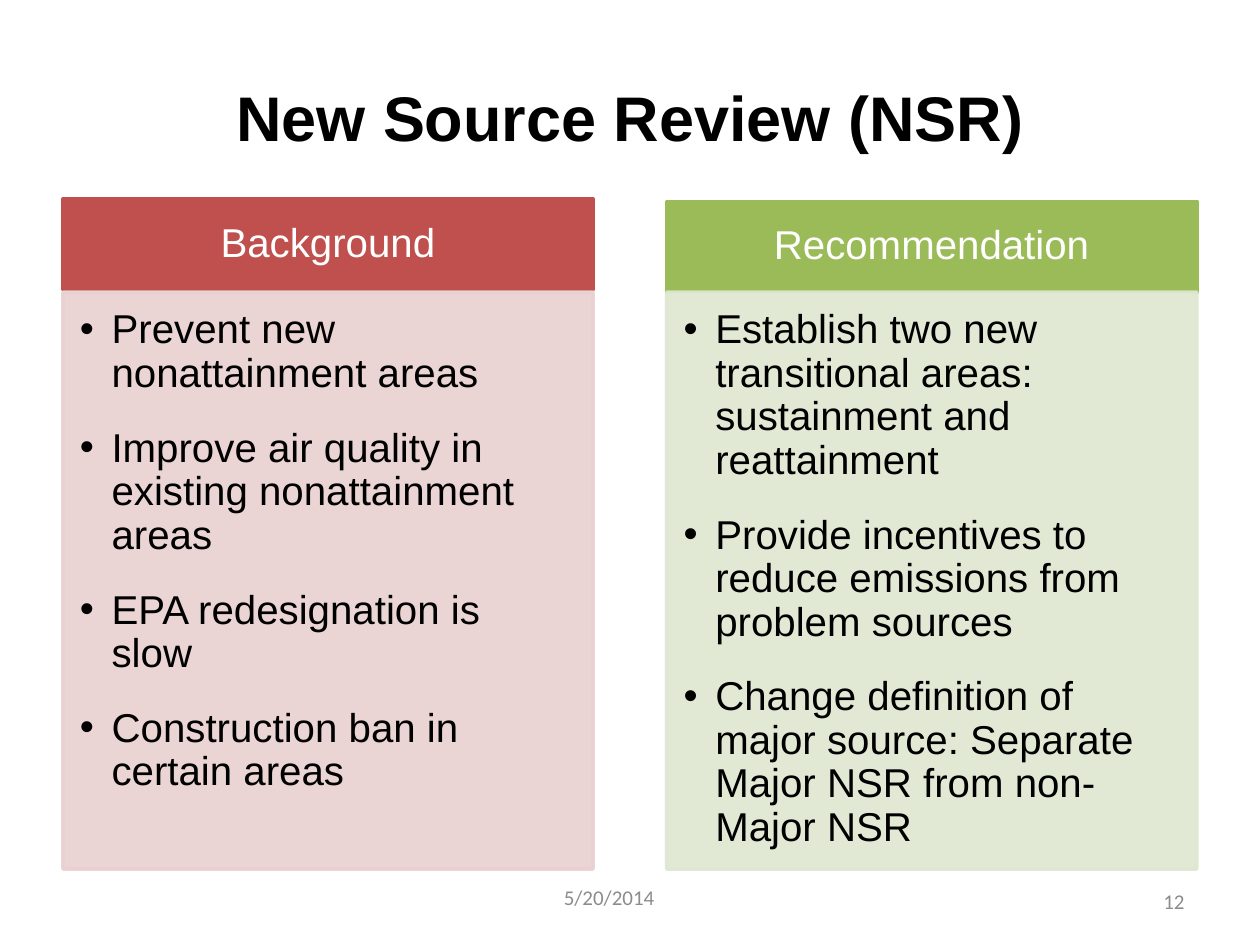
from lxml import etree
from pptx import Presentation
from pptx.dml.color import RGBColor
from pptx.enum.shapes import MSO_SHAPE
from pptx.enum.text import MSO_ANCHOR, PP_ALIGN
from pptx.oxml.ns import qn
from pptx.util import Cm, Pt

RECTANGLE = MSO_SHAPE.RECTANGLE
TOP, MIDDLE = MSO_ANCHOR.TOP, MSO_ANCHOR.MIDDLE
LEFT, CENTER, RIGHT = PP_ALIGN.LEFT, PP_ALIGN.CENTER, PP_ALIGN.RIGHT

COLORS = {
    "black": "000000",
    "white": "FFFFFF",
    "gray": "8C8C8C",
    "red": "C0504D",
    "pale_red": "E8D0D0",
    "green": "9BBB59",
    "pale_green": "DEE7D1",
}

COLUMN_WIDTH = 10.69
BODY_TOP = 5.89
BODY_HEIGHT = 11.63
HEADER_HEIGHT = 1.83
HEADER_INSETS = (0.45, 0.26, 0.45, 0.26)
BODY_INSETS = (0.34, 0.34, 0.45, 0.51)
DEFAULT_INSETS = (0.25, 0.13, 0.25, 0.13)

COLUMNS = [
    ("Background", 1.27, 4.01, "red", "pale_red", [
        "Prevent new nonattainment areas",
        "Improve air quality in existing nonattainment areas",
        "EPA redesignation is slow",
        "Construction ban in certain areas",
    ]),
    ("Recommendation", 13.44, 4.06, "green", "pale_green", [
        "Establish two new transitional areas: sustainment and reattainment",
        "Provide incentives to reduce emissions from problem sources",
        "Change definition of major source: Separate Major NSR from non-Major NSR",
    ]),
]


def add_bullet(paragraph, indent):
    properties = paragraph._p.get_or_add_pPr()
    properties.set("marL", str(indent))
    properties.set("indent", str(-indent))
    etree.SubElement(properties, qn("a:buFont")).set("typeface", "Arial")
    etree.SubElement(properties, qn("a:buChar")).set("char", "•")


def write_text(shape, lines, size, color, font="Arial", bold=False, align=CENTER,
               anchor=MIDDLE, insets=DEFAULT_INSETS, bullets=False,
               line_spacing=None, space_after=0):
    frame = shape.text_frame
    frame.word_wrap = True
    frame.vertical_anchor = anchor
    (frame.margin_left, frame.margin_top,
     frame.margin_right, frame.margin_bottom) = map(Cm, insets)
    frame.text = "\n".join(lines)
    for paragraph in frame.paragraphs:
        if bullets:
            add_bullet(paragraph, Cm(0.64))
        paragraph.alignment = align
        paragraph.line_spacing = line_spacing
        paragraph.space_after = Pt(space_after)
        paragraph.font.name = font
        paragraph.font.size = Pt(size)
        paragraph.font.bold = bold
        paragraph.font.color.rgb = RGBColor.from_string(COLORS[color])


def add_label(slide, text, left, top, width, height, **text_format):
    box = slide.shapes.add_textbox(Cm(left), Cm(top), Cm(width), Cm(height))
    write_text(box, [text], **text_format)


def add_panel(slide, left, top, height, color, opacity=100):
    shape = slide.shapes.add_shape(
        RECTANGLE, Cm(left), Cm(top), Cm(COLUMN_WIDTH), Cm(height))
    shape.shadow.inherit = False
    shape.line.width = Pt(2)
    shape.fill.solid()
    for fill in (shape.fill, shape.line.fill):
        fill.solid()
        fill.fore_color.rgb = RGBColor.from_string(COLORS[color])
    if opacity < 100:
        for element in shape._element.spPr.iter(qn("a:srgbClr")):
            etree.SubElement(element, qn("a:alpha")).set("val", str(opacity * 1000))
    return shape


def add_column(slide, heading, left, top, header_color, body_color, points):
    header = add_panel(slide, left, top, HEADER_HEIGHT, header_color)
    write_text(header, [heading], size=23, color="white",
               insets=HEADER_INSETS, line_spacing=0.9)
    body = add_panel(slide, left, BODY_TOP, BODY_HEIGHT, body_color, opacity=90)
    write_text(body, points, size=23, color="black", align=LEFT, anchor=TOP,
               insets=BODY_INSETS, bullets=True, line_spacing=0.9, space_after=18)


def main():
    presentation = Presentation()
    presentation.slide_width = Cm(25.4)
    presentation.slide_height = Cm(19.05)
    slide = presentation.slides.add_slide(presentation.slide_layouts[6])
    for column in COLUMNS:
        add_column(slide, *column)
    add_label(slide, "5/20/2014", 9.32, 17.58, 5.92, 1.02,
              size=12, color="gray", font="Calibri")
    add_label(slide, "12", 18.21, 17.65, 5.92, 1.02,
              size=12, color="gray", font="Calibri", align=RIGHT)
    add_label(slide, "New Source Review (NSR)", 1.27, 0.76, 22.86, 3.18,
              size=36, color="black", bold=True)
    presentation.save("out.pptx")


if __name__ == "__main__":
    main()
